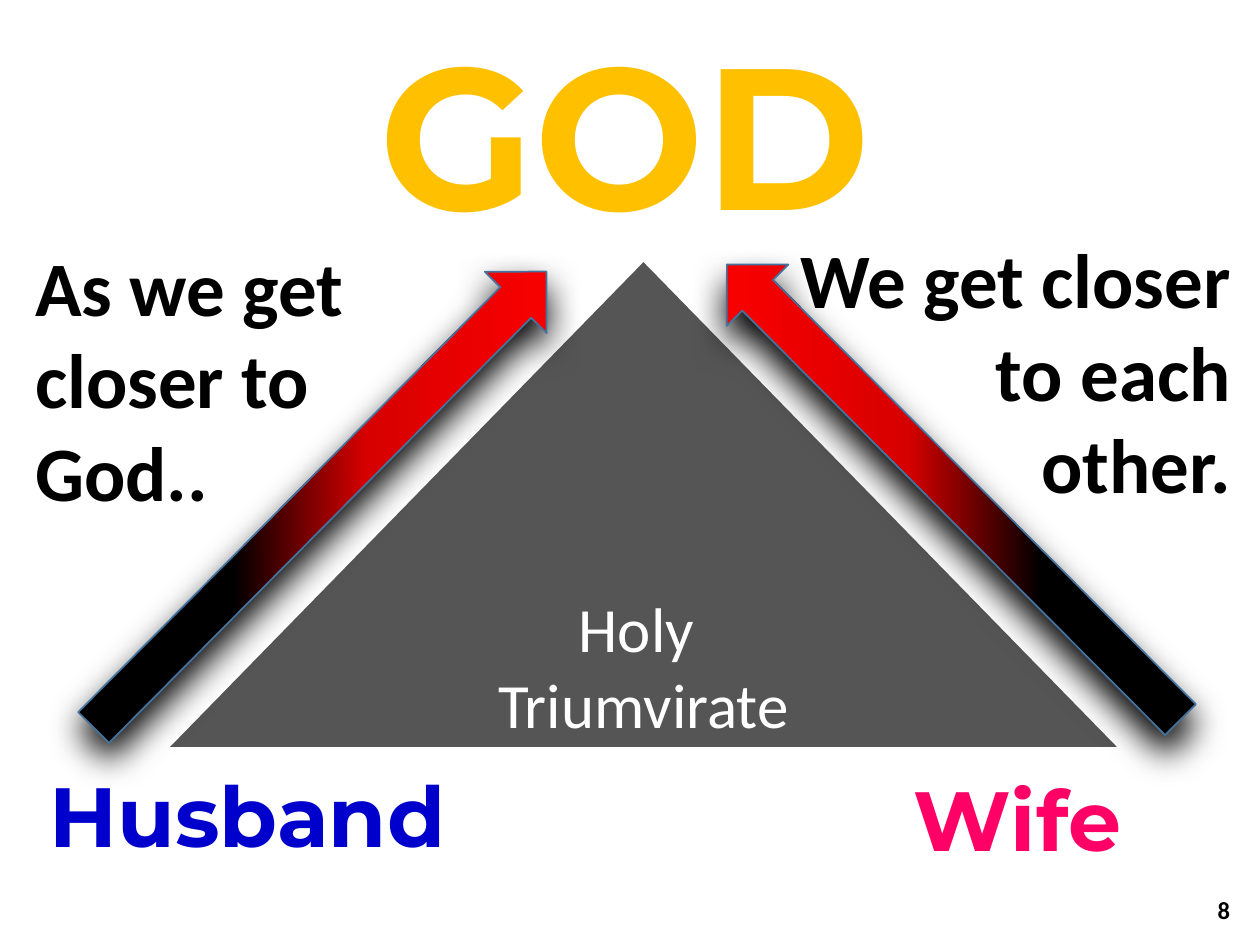
from lxml.etree import SubElement
from pptx import Presentation
from pptx.dml.color import RGBColor
from pptx.enum.shapes import MSO_SHAPE
from pptx.enum.text import MSO_ANCHOR, PP_ALIGN
from pptx.oxml import parse_xml
from pptx.oxml.ns import nsdecls, qn
from pptx.util import Pt

COLORS = {
    "black": "000000", "white": "FFFFFF", "gold": "FFC000",
    "blue": "0000CC", "pink": "FF0066", "gray": "555555",
    "outline": "43739E", "dark_red": "D70000", "red": "FF0000",
}
ARROW_STOPS = [(33, "black"), (59, "dark_red"), (100, "red")]


def color(name):
    """Return the named colour."""
    return RGBColor.from_string(COLORS[name])


def write_text(shape, text, size, ink, font="Calibri", bold=True,
               align=PP_ALIGN.LEFT, anchor=MSO_ANCHOR.TOP, wrap=True):
    """Fill a shape with one formatted paragraph; newlines become line breaks."""
    frame = shape.text_frame
    frame.word_wrap = wrap
    frame.vertical_anchor = anchor
    para = frame.paragraphs[0]
    para.text = text.replace("\n", "\v")
    para.alignment = align
    for span in para.runs:
        span.font.name = font
        span.font.size = Pt(size)
        span.font.bold = bold
        span.font.color.rgb = color(ink)


def add_label(page, bounds, text, **style):
    """Add a text box."""
    box = page.shapes.add_textbox(*map(Pt, bounds))
    write_text(box, text, **style)


def add_triangle(page, bounds, text):
    """Add the central triangle with its caption at the foot."""
    shape = page.shapes.add_shape(MSO_SHAPE.ISOSCELES_TRIANGLE, *map(Pt, bounds))
    shape.shadow.inherit = False
    shape.fill.solid()
    shape.fill.fore_color.rgb = color("gray")
    shape.line.fill.background()
    write_text(shape, text, size=36, ink="white", bold=False,
               align=PP_ALIGN.CENTER, anchor=MSO_ANCHOR.BOTTOM)


def gradient_xml():
    """Return the gradient fill of the arrows."""
    stops = "".join(
        f'<a:gs pos="{place * 1000}"><a:srgbClr val="{COLORS[name]}"/></a:gs>'
        for place, name in ARROW_STOPS)
    return parse_xml(
        f'<a:gradFill {nsdecls("a")} rotWithShape="1"><a:gsLst>{stops}</a:gsLst>'
        '<a:lin ang="2700000" scaled="0"/></a:gradFill>')


def add_arrow(page, left, top, rotation, shadow_distance, flipped=False):
    """Add a slanted gradient arrow with a soft shadow below it."""
    arrow = page.shapes.add_shape(
        MSO_SHAPE.RIGHT_ARROW, Pt(left), Pt(top), Pt(367.2), Pt(49.7))
    arrow.rotation = rotation
    arrow.line.color.rgb = color("outline")
    arrow.line.width = Pt(1)
    arrow.shadow.inherit = False
    properties = arrow._element.spPr
    if flipped:
        properties.find(qn("a:xfrm")).set("flipH", "1")
    properties.find(qn("a:prstGeom")).addnext(gradient_xml())
    shadow = SubElement(
        properties.find(qn("a:effectLst")), qn("a:outerShdw"),
        blurRad=str(Pt(20)), dist=str(Pt(shadow_distance)), dir="5400000",
        algn="ctr", rotWithShape="0")
    SubElement(shadow, qn("a:srgbClr"), val=COLORS["black"])


def main():
    """Build the slide and save it."""
    deck = Presentation()
    deck.slide_width, deck.slide_height = Pt(720), Pt(540)
    page = deck.slides.add_slide(deck.slide_layouts[6])
    center, right = PP_ALIGN.CENTER, PP_ALIGN.RIGHT

    add_label(page, (548, 505.5, 162, 28.8), "8", size=14, ink="black",
              align=right, anchor=MSO_ANCHOR.MIDDLE)
    add_triangle(page, (97.2, 149.8, 541, 277), "Holy \nTriumvirate")
    add_label(page, (208, 1.5, 298, 147), "GOD", size=115, ink="gold",
              font="Montserrat", align=center, wrap=False)
    add_arrow(page, -0.7, 260.6, 314.8, 9)
    add_arrow(page, 361.4, 256.3, 45.1, 11, flipped=True)
    add_label(page, (13, 133.2, 242.6, 167), "As we get\ncloser to\nGod..",
              size=44, ink="black")
    add_label(page, (446.4, 128.9, 264.2, 167), "We get closer to each\nother.",
              size=44, ink="black", align=right)
    add_label(page, (17.3, 432.7, 262, 65.5), "Husband ", size=48, ink="blue",
              font="Montserrat", align=center, wrap=False)
    add_label(page, (452.9, 434.9, 257, 65.5), "Wife", size=48, ink="pink",
              font="Montserrat", align=center)
    deck.save("out.pptx")


if __name__ == "__main__":
    main()
